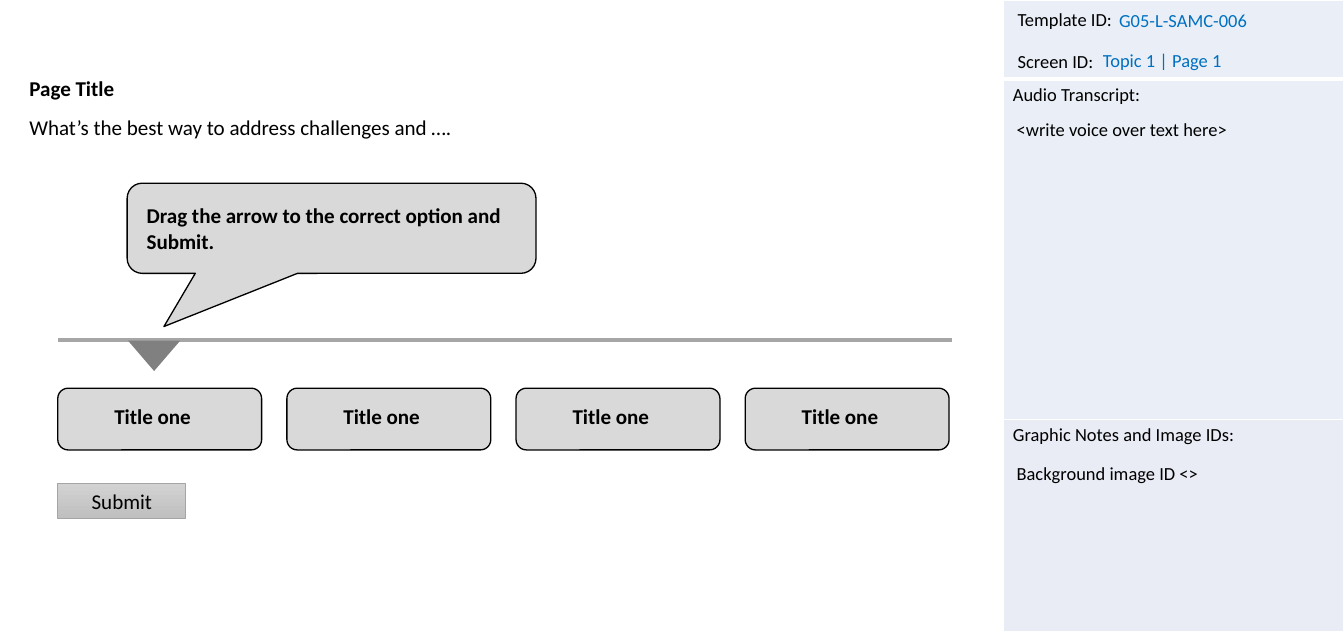
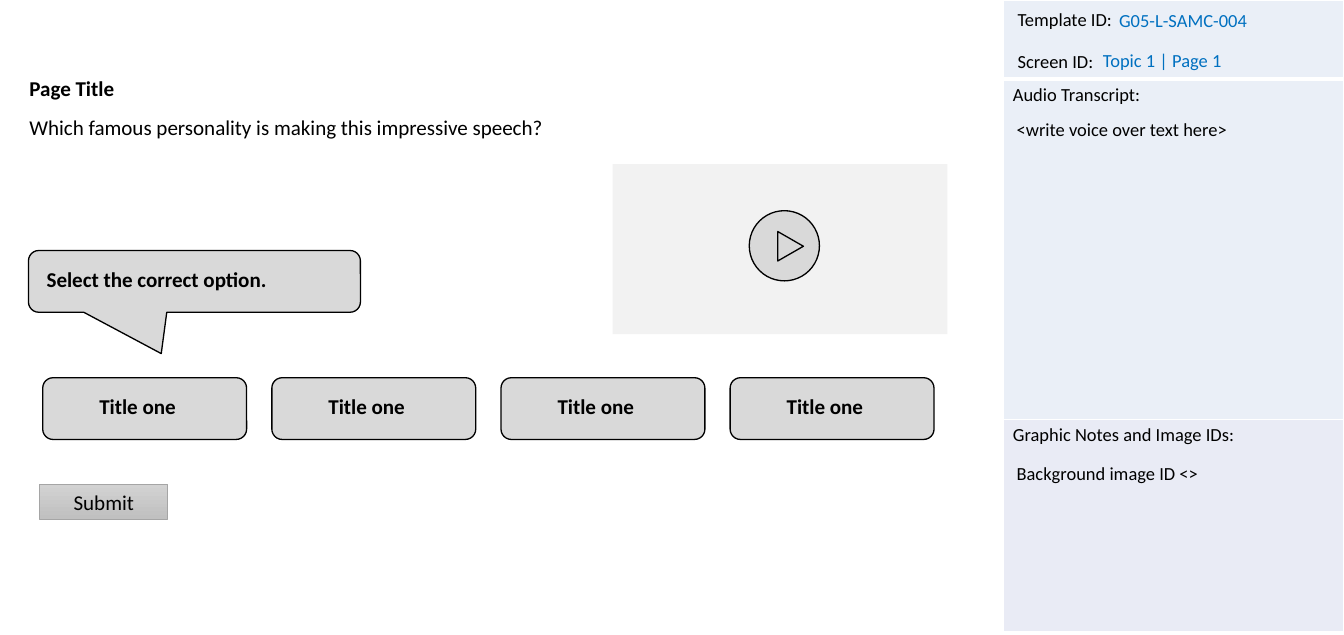
import dataclasses

import lxml.etree
import pptx
import pptx.dml.color
import pptx.enum.shapes
import pptx.enum.text
import pptx.oxml
import pptx.oxml.ns
import pptx.util

SHAPE = pptx.enum.shapes.MSO_SHAPE
ALIGN = pptx.enum.text.PP_ALIGN
ANCHOR = pptx.enum.text.MSO_ANCHOR
FIT = pptx.enum.text.MSO_AUTO_SIZE
qn = pptx.oxml.ns.qn


@dataclasses.dataclass(frozen=True)
class Theme:
    font: str = "Calibri"
    text_size: int = 16
    note_size: int = 14
    ink: str = "000000"
    paper: str = "FFFFFF"
    link: str = "0070C0"
    panel: str = "EAEFF7"
    panel_alternate: str = "E9EBF5"
    button: str = "D9D9D9"
    video: str = "F2F2F2"
    track: str = "A6A6A6"
    marker: str = "808080"
    submit_top: str = "D2D2D2"
    submit_bottom: str = "C0C0C0"
    submit_line: str = "A5A5A5"


def rgb(color):
    return pptx.dml.color.RGBColor.from_string(color)


class Storyboard:
    """Every position and length is a percentage of the slide's width or height."""

    def __init__(self, theme):
        self.theme = theme
        self.presentation = pptx.Presentation()
        self.presentation.slide_width = pptx.util.Inches(14.17)
        self.presentation.slide_height = pptx.util.Inches(6.69)
        self.slide = None

    def across(self, share):
        return round(self.presentation.slide_width * share / 100)

    def down(self, share):
        return round(self.presentation.slide_height * share / 100)

    def box(self, left, top, width, height):
        return self.across(left), self.down(top), self.across(width), self.down(height)

    def set_text(self, frame, text, size, color=None, bold=False, align=ALIGN.LEFT,
                 anchor=ANCHOR.TOP, insets=None, fit=FIT.NONE):
        frame.text = text
        frame.word_wrap = True
        frame.auto_size = fit
        frame.vertical_anchor = anchor
        if insets:
            (frame.margin_left, frame.margin_top, frame.margin_right,
             frame.margin_bottom) = map(pptx.util.Inches, insets)
        self.style_paragraph(frame.paragraphs[0], size, color, bold, align)

    def style_paragraph(self, paragraph, size, color=None, bold=False,
                        align=ALIGN.LEFT):
        paragraph.alignment = align
        for run in paragraph.runs:
            run.font.name = self.theme.font
            run.font.size = pptx.util.Pt(size)
            run.font.bold = bold
            run.font.color.rgb = rgb(color or self.theme.ink)

    def page(self, template_id, question):
        layout = self.presentation.slide_layouts[1]
        self.slide = self.presentation.slides.add_slide(layout)
        self.panel(template_id)
        title, body = self.slide.placeholders
        self.placeholder(title, "Page Title", (2.19, 11.81, 45.2, 5.68), bold=True)
        self.placeholder(body, question, (2.19, 18.09, 68.4, 8.22))

    def placeholder(self, shape, text, place, bold=False):
        shape.left, shape.top, shape.width, shape.height = self.box(*place)
        self.set_text(shape.text_frame, text, self.theme.text_size, bold=bold,
                      insets=(0, 0, 0, 0))
        paragraph = shape.text_frame.paragraphs[0]
        paragraph.space_before = pptx.util.Pt(0)
        properties = paragraph._p.get_or_add_pPr()
        properties.set("marL", "0")
        properties.set("indent", "0")
        lxml.etree.SubElement(properties, qn("a:buNone"))

    def panel(self, template_id):
        theme = self.theme
        rows = (
            (12.41, "", theme.panel, 3),
            (53.66, "Audio Transcript:", theme.panel, 1),
            (33.33, "Graphic Notes and Image IDs:", theme.panel_alternate, 1),
        )
        height = sum(row[0] for row in rows)
        frame = self.slide.shapes.add_table(
            len(rows), 1, *self.box(74.66, 0, 25.34, height))
        table = frame.table
        table.first_row = table.horz_banding = False
        upper = 1
        for index, (share, text, color, lower) in enumerate(rows):
            table.rows[index].height = self.down(share)
            cell = table.cell(index, 0)
            cell.text = text
            self.style_paragraph(cell.text_frame.paragraphs[0], theme.note_size)
            cell.fill.solid()
            cell.fill.fore_color.rgb = rgb(color)
            self.borders(cell, {"lnL": 1, "lnR": 1, "lnT": upper, "lnB": lower})
            upper = lower
        notes = (
            ("Screen ID:", 75.02, 7.17, theme.ink),
            ("Template ID:", 75.02, 0.6, theme.ink),
            (template_id, 82.57, 0.75, theme.link),
            ("Topic 1 | Page 1", 81.37, 7.03, theme.link),
            ("<write voice over text here>", 74.95, 17.79, theme.ink),
            ("Background image ID <>", 74.95, 72.05, theme.ink),
        )
        for text, left, top, color in notes:
            self.note(text, left, top, color)

    def borders(self, cell, widths):
        properties = cell._tc.get_or_add_tcPr()
        for index, (side, points) in enumerate(widths.items()):
            line = lxml.etree.Element(qn("a:" + side), w=str(pptx.util.Pt(points)))
            fill = lxml.etree.SubElement(line, qn("a:solidFill"))
            lxml.etree.SubElement(fill, qn("a:srgbClr"), val=self.theme.paper)
            properties.insert(index, line)

    def note(self, text, left, top, color):
        shape = self.slide.shapes.add_textbox(*self.box(left, top, 100 - left, 5.08))
        self.set_text(shape.text_frame, text, self.theme.note_size, color)

    def shape(self, kind, place, fill, line=None, points=1, parent=None):
        shapes = (parent or self.slide).shapes
        shape = shapes.add_shape(kind, *self.box(*place))
        shape.shadow.inherit = False
        shape.fill.solid()
        shape.fill.fore_color.rgb = rgb(fill)
        if line:
            shape.line.color.rgb = rgb(line)
            shape.line.width = pptx.util.Pt(points)
        else:
            shape.line.fill.background()
        return shape

    def bubble(self, kind, place, text, align=ALIGN.LEFT):
        shape = self.shape(kind, place, self.theme.button, self.theme.ink)
        self.set_text(shape.text_frame, text, self.theme.text_size, bold=True,
                      align=align, insets=(0.16, 0.16, 0.31, 0.16),
                      fit=FIT.SHAPE_TO_FIT_TEXT)
        return shape

    def callout(self, place, text, tip):
        shape = self.bubble(SHAPE.ROUNDED_RECTANGULAR_CALLOUT, place, text)
        shape.adjustments[0], shape.adjustments[1] = tip

    def options(self, left, top, titles):
        for column, title in enumerate(titles):
            place = (left + column * 17.05, top, 15.17, 9.72)
            self.bubble(SHAPE.ROUNDED_RECTANGLE, place, title, ALIGN.CENTER)

    def submit(self, left, top):
        theme = self.theme
        shape = self.shape(SHAPE.RECTANGLE, (left, top, 9.53, 5.53),
                           theme.submit_top, theme.submit_line, 0.5)
        shape.fill.gradient()
        shape.fill.gradient_angle = 270
        colors = (theme.submit_top, theme.submit_bottom)
        for position, (stop, color) in enumerate(zip(shape.fill.gradient_stops, colors)):
            stop.position = position
            stop.color.rgb = rgb(color)
        self.set_text(shape.text_frame, "Submit", theme.text_size, align=ALIGN.CENTER,
                      anchor=ANCHOR.MIDDLE, insets=(0, 0.05, 0, 0.05))

    def slider(self, left, right, top):
        line = self.slide.shapes.add_connector(
            pptx.enum.shapes.MSO_CONNECTOR.STRAIGHT, self.across(left), self.down(top),
            self.across(right), self.down(top))
        line.line.color.rgb = rgb(self.theme.track)
        line.line.width = pptx.util.Pt(3)
        lxml.etree.SubElement(line._element.spPr, qn("a:effectLst"))
        self.shape(SHAPE.FLOWCHART_MERGE, (9.53, top + 0.15, 3.88, 4.78),
                   self.theme.marker)

    def video(self):
        theme = self.theme
        group = self.slide.shapes.add_group_shape()
        self.shape(SHAPE.RECTANGLE, (45.59, 25.86, 24.91, 26.76), theme.video,
                   parent=group)
        self.shape(SHAPE.OVAL, (55.75, 33.18, 5.22, 11.06), theme.button, theme.ink,
                   parent=group)
        play = self.shape(SHAPE.ISOSCELES_TRIANGLE, (57.73, 36.77, 2.19, 4.04),
                          theme.button, theme.ink, parent=group)
        play.rotation = 90


def main():
    board = Storyboard(Theme())
    titles = ["Title one"] * 4

    board.page("G05-L-SAMC-006", "What’s the best way to address challenges and ….")
    board.callout((9.46, 28.85, 30.42, 14.2),
                  "Drag the arrow to the correct option and Submit.", (-0.41, 1.09))
    board.slider(4.3, 70.85, 53.51)
    board.submit(4.3, 76.08)
    board.options(4.3, 61.14, titles)

    board.page("G05-L-SAMC-004",
               "Which famous personality is making this impressive speech?")
    board.submit(2.96, 76.23)
    board.callout((2.12, 39.46, 24.7, 9.72), "Select the correct option.", (-0.1, 1.17))
    board.options(3.18, 59.49, titles)
    board.video()

    board.presentation.save("out.pptx")


if __name__ == "__main__":
    main()
